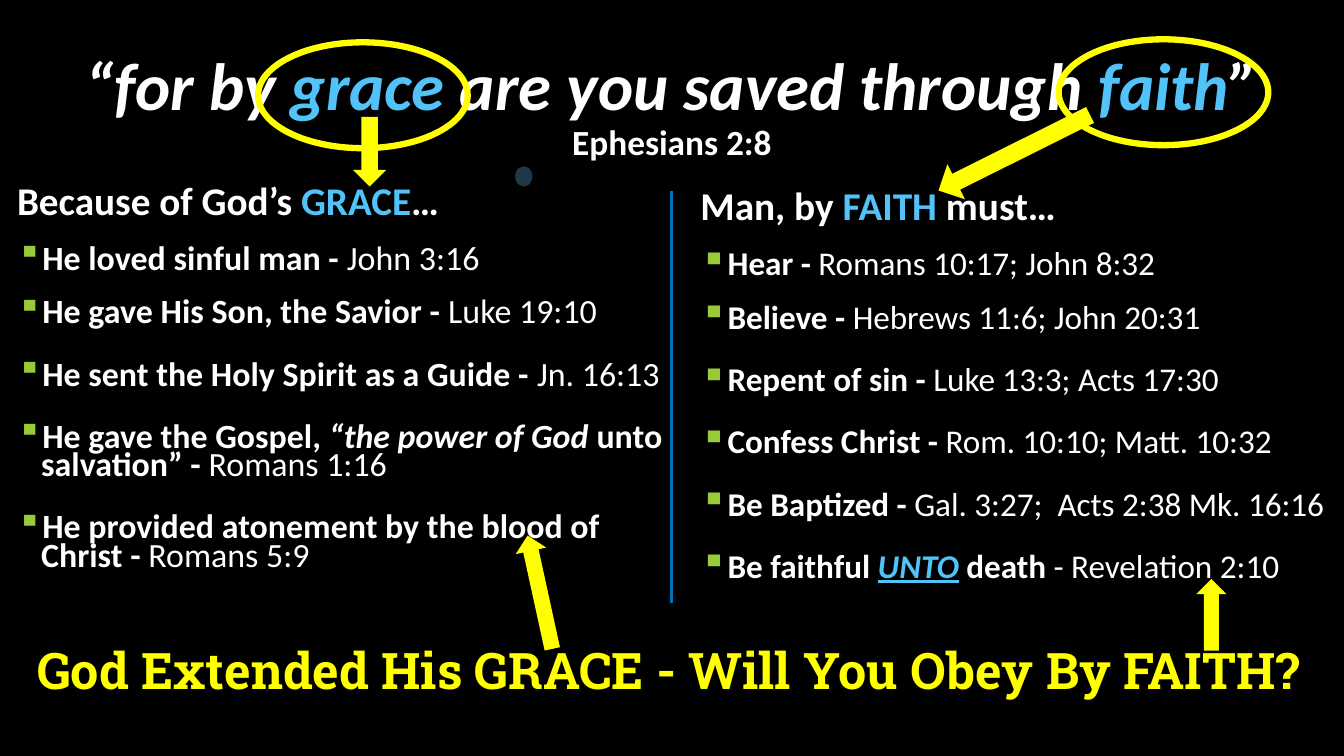
from lxml.etree import SubElement
from pptx import Presentation
from pptx.dml.color import RGBColor
from pptx.enum.shapes import MSO_CONNECTOR as Connector, MSO_SHAPE as Shape
from pptx.enum.text import MSO_ANCHOR as Anchor, MSO_AUTO_SIZE as AutoSize, PP_ALIGN as Align
from pptx.oxml.ns import qn
from pptx.util import Inches, Pt

COLORS = {"back": "000000", "text": "FFFFFF", "accent": "51C3F9", "mark": "FFFF00",
          "bullet": "99CB38", "rule": "0070C0", "dot": "213848"}
BODY_FONT, CLOSING_FONT = "Calibri", "Roboto Slab"

# Each span style: colour, bold, italic, underline
SPAN_STYLES = {
    "strong": ("text", True, False, False),
    "plain": ("text", False, False, False),
    "quote": ("text", True, True, False),
    "key": ("accent", True, False, False),
    "key quote": ("accent", True, True, False),
    "key line": ("accent", True, True, True),
    "closing": ("mark", True, False, False),
}

VERSE = [("“for by ", "quote"), ("grace", "key quote"), (" are you saved through ", "quote"),
         ("faith", "key quote"), ("”", "quote")]

GRACE_HEADING = [("Because of God’s ", "strong"), ("GRACE", "key"), ("…", "strong")]
GRACE_POINTS = [
    [("He loved sinful man - ", "strong"), ("John 3:16", "plain")],
    [("He gave His Son, the Savior - ", "strong"), ("Luke 19:10", "plain")],
    [("He sent the Holy Spirit as a Guide - ", "strong"), ("Jn. 16:13", "plain")],
    [("He gave the Gospel, ", "strong"), ("“the power of God ", "quote"),
     ("unto salvation” - ", "strong"), ("Romans 1:16", "plain")],
    [("He provided atonement by the blood of Christ - ", "strong"), ("Romans 5:9", "plain")],
]

FAITH_HEADING = [("Man, by ", "strong"), ("FAITH", "key"), (" must…", "strong")]
FAITH_POINTS = [
    [("Hear - ", "strong"), ("Romans 10:17; John 8:32", "plain")],
    [("Believe - ", "strong"), ("Hebrews 11:6; John 20:31", "plain")],
    [("Repent of sin - ", "strong"), ("Luke 13:3; Acts 17:30", "plain")],
    [("Confess Christ - ", "strong"), ("Rom. 10:10; Matt. 10:32", "plain")],
    [("Be Baptized - ", "strong"), ("Gal. 3:27;  Acts 2:38 Mk. 16:16", "plain")],
    [("Be faithful ", "strong"), ("UNTO", "key line"), (" death", "strong"),
     (" - Revelation 2:10", "plain")],
]


def rgb(name):
    return RGBColor.from_string(COLORS[name])


class SlideBuilder:
    """Draws on one slide; places are percentages of its width and height."""

    def __init__(self, deck):
        self.deck = deck
        self.page = deck.slides.add_slide(deck.slide_layouts[5])
        self.page.background.fill.solid()
        self.page.background.fill.fore_color.rgb = rgb("back")

    def across(self, percent):
        return round(self.deck.slide_width * percent / 100)

    def down(self, percent):
        return round(self.deck.slide_height * percent / 100)

    def place(self, left, top, width, height):
        return self.across(left), self.down(top), self.across(width), self.down(height)

    def add_spans(self, para, spans, size, font=BODY_FONT):
        for text, style in spans:
            color, bold, italic, underline = SPAN_STYLES[style]
            span = para.add_run()
            span.text = text
            span.font.name, span.font.size = font, Pt(size)
            span.font.bold, span.font.italic, span.font.underline = bold, italic, underline
            span.font.color.rgb = rgb(color)

    def title(self, spot, verse, source):
        box = self.page.shapes.title
        box.left, box.top, box.width, box.height = self.place(*spot)
        frame = box.text_frame
        frame.auto_size, frame.vertical_anchor = AutoSize.NONE, Anchor.BOTTOM
        para = frame.paragraphs[0]
        para.alignment, para.line_spacing = Align.CENTER, 0.9
        self.add_spans(para, verse, 47.7)
        para.add_line_break()
        self.add_spans(para, [(source, "strong")], 25.2)

    def text_box(self, spot):
        frame = self.page.shapes.add_textbox(*self.place(*spot)).text_frame
        frame.word_wrap = True
        return frame

    def bullet(self, para, indent, percent):
        props = para._p.get_or_add_pPr()
        props.set("marL", str(Inches(indent)))
        props.set("indent", str(-Inches(indent)))
        color = SubElement(props, qn("a:buClr"))
        SubElement(color, qn("a:srgbClr"), val=COLORS["bullet"])
        SubElement(props, qn("a:buSzPct"), val=str(percent * 1000))
        SubElement(props, qn("a:buChar"), char="▪")

    def point_list(self, spot, heading, points, sizes, before, spacing, indent, bullet_percent):
        """Adds a heading and its bullets; the inner bullets get space after."""
        frame = self.text_box(spot)
        first = frame.paragraphs[0]
        first.line_spacing = spacing
        self.add_spans(first, heading, sizes[0])
        for number, spans in enumerate(points):
            para = frame.add_paragraph()
            self.bullet(para, indent, bullet_percent)
            para.line_spacing, para.space_before = spacing, Pt(before)
            if 0 < number < len(points) - 1:
                para.space_after = Pt(6)
            self.add_spans(para, spans, sizes[1])

    def closing(self, spot, text):
        para = self.text_box(spot).paragraphs[0]
        para.alignment = Align.CENTER
        self.add_spans(para, [(text, "closing")], 36, CLOSING_FONT)

    def divider(self, column, top, bottom):
        line = self.page.shapes.add_connector(
            Connector.STRAIGHT, self.across(column), self.down(top),
            self.across(column), self.down(bottom))
        line.line.color.rgb, line.line.width = rgb("rule"), Pt(2.25)
        SubElement(line._element.spPr, qn("a:effectLst"))

    def filled(self, kind, spot, color):
        shape = self.page.shapes.add_shape(kind, *self.place(*spot))
        shape.shadow.inherit = False
        shape.fill.solid()
        shape.fill.fore_color.rgb = rgb(color)
        shape.line.fill.background()
        return shape

    def ring(self, left, top):
        shape = self.page.shapes.add_shape(Shape.OVAL, *self.place(left, top, 15.6, 14))
        shape.shadow.inherit = False
        shape.fill.background()
        shape.line.color.rgb, shape.line.width = rgb("mark"), Pt(4.5)

    def arrow(self, spot, turn, shaft=0.5):
        shape = self.filled(Shape.RIGHT_ARROW, spot, "mark")
        shape.adjustments[0] = shaft
        shape.rotation = turn


def main():
    deck = Presentation()
    deck.slide_width, deck.slide_height = Inches(13.33), Inches(7.5)
    slide = SlideBuilder(deck)
    slide.title((0.6, -1.33, 98.8, 23.6), VERSE, "Ephesians 2:8")
    slide.point_list((51.38, 23.33, 48.16, 73.2), FAITH_HEADING, FAITH_POINTS,
                     sizes=(28.1, 23.7), before=10, spacing=1.0, indent=0.25, bullet_percent=110)
    slide.divider(49.96, 25.33, 79.73)
    slide.point_list((0.53, 24.4, 49.81, 59.6), GRACE_HEADING, GRACE_POINTS,
                     sizes=(28, 24.2), before=18, spacing=0.7, indent=0.24, bullet_percent=100)
    slide.closing((-3.08, 83.87, 105.7, 9.47),
                  "God Extended His GRACE - Will You Obey By FAITH?")
    slide.ring(19.2, 5.6)
    slide.ring(78.77, 5.2)
    slide.arrow((24.91, 17.87, 5.18, 4.4), 90)
    slide.arrow((69.17, 17.6, 12.6, 5.2), 153.5, shaft=0.45)
    slide.arrow((35.86, 76.27, 8.63, 4.13), 257.7)
    slide.arrow((87.47, 79.33, 5.33, 4), 270)
    slide.filled(Shape.OVAL, (38.33, 22, 1.28, 2.67), "dot")
    deck.save("out.pptx")


if __name__ == "__main__":
    main()
